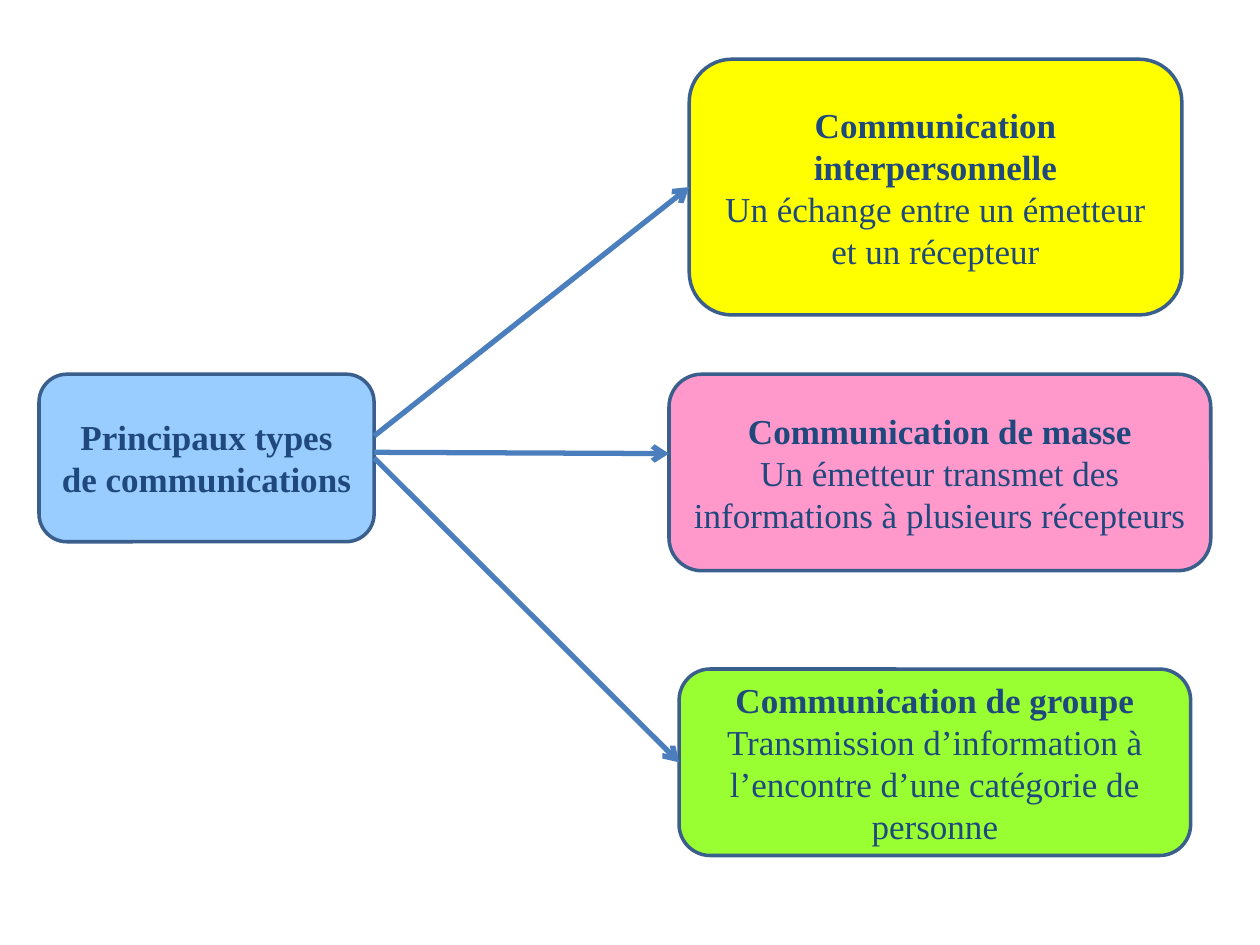
"""Build a slide linking the main types of communication to their definitions."""
from dataclasses import dataclass

from lxml import etree
from pptx import Presentation
from pptx.dml.color import RGBColor
from pptx.enum.shapes import MSO_CONNECTOR, MSO_SHAPE
from pptx.enum.text import MSO_ANCHOR, PP_ALIGN
from pptx.oxml.ns import qn
from pptx.util import Inches, Pt

ROUNDED = MSO_SHAPE.ROUNDED_RECTANGLE
STRAIGHT = MSO_CONNECTOR.STRAIGHT
MIDDLE = MSO_ANCHOR.MIDDLE
CENTER = PP_ALIGN.CENTER
LEFT_SIDE, RIGHT_SIDE = 1, 3


@dataclass(frozen=True)
class Theme:
    font: str = "Times New Roman"
    size: float = 20
    text: str = "1F497D"
    border: str = "3A5F8C"
    border_width: float = 2
    arrow: str = "4B7EBC"
    arrow_width: float = 3
    blue: str = "99CCFF"
    yellow: str = "FFFF00"
    pink: str = "FF99CC"
    green: str = "99FF33"


THEME = Theme()

ROOT = {
    "title": "Principaux types de communications",
    "area": (0.31, 2.97, 2.66, 1.33),
    "fill": THEME.blue,
}
TYPES = [
    {
        "title": "Communication interpersonnelle",
        "detail": "Un échange entre un émetteur et un récepteur",
        "area": (5.47, 0.47, 3.91, 2.03),
        "fill": THEME.yellow,
        "start_y": 3.46,
    },
    {
        "title": "Communication de masse",
        "detail": "Un émetteur transmet des informations à plusieurs récepteurs",
        "area": (5.31, 2.97, 4.3, 1.56),
        "fill": THEME.pink,
        "start_y": 3.59,
        "end_y": 3.6,
    },
    {
        "title": "Communication de groupe",
        "detail": "Transmission d’information à l’encontre d’une catégorie de personne",
        "area": (5.39, 5.31, 4.06, 1.48),
        "fill": THEME.green,
    },
]


def write(para, text, bold=False, size=THEME.size, color=THEME.text):
    """Write one centred, formatted span into a paragraph."""
    para.alignment = CENTER
    span = para.add_run()
    span.text = text
    span.font.name = THEME.font
    span.font.size = Pt(size)
    span.font.bold = bold
    span.font.color.rgb = RGBColor.from_string(color)


def add_box(page, item):
    """Add a rounded box with a bold title and an optional detail."""
    box = page.shapes.add_shape(ROUNDED, *map(Inches, item["area"]))
    box.shadow.inherit = False
    box.fill.solid()
    box.fill.fore_color.rgb = RGBColor.from_string(item["fill"])
    box.line.color.rgb = RGBColor.from_string(THEME.border)
    box.line.width = Pt(THEME.border_width)
    frame = box.text_frame
    frame.word_wrap = True
    frame.vertical_anchor = MIDDLE
    write(frame.paragraphs[0], item["title"], bold=True)
    if "detail" in item:
        write(frame.add_paragraph(), item["detail"])
    return box


def add_arrow(page, source, target, start_y=None, end_y=None):
    """Join two boxes at their sides' middles, or at the heights given."""
    arrow = page.shapes.add_connector(
        STRAIGHT,
        source.left + source.width,
        Inches(start_y or 0),
        target.left,
        Inches(end_y or 0),
    )
    if start_y is None:
        arrow.begin_connect(source, RIGHT_SIDE)
    if end_y is None:
        arrow.end_connect(target, LEFT_SIDE)
    arrow.line.color.rgb = RGBColor.from_string(THEME.arrow)
    arrow.line.width = Pt(THEME.arrow_width)
    properties = arrow.line._get_or_add_ln()
    etree.SubElement(properties, qn("a:tailEnd"), type="arrow")
    etree.SubElement(properties.getparent(), qn("a:effectLst"))


def main():
    """Build and save the deck."""
    deck = Presentation()
    deck.slide_width, deck.slide_height = Inches(10), Inches(7.5)
    page = deck.slides.add_slide(deck.slide_layouts[6])
    root = add_box(page, ROOT)
    for item in TYPES:
        box = add_box(page, item)
        add_arrow(page, root, box, item.get("start_y"), item.get("end_y"))
    deck.save("out.pptx")


if __name__ == "__main__":
    main()
